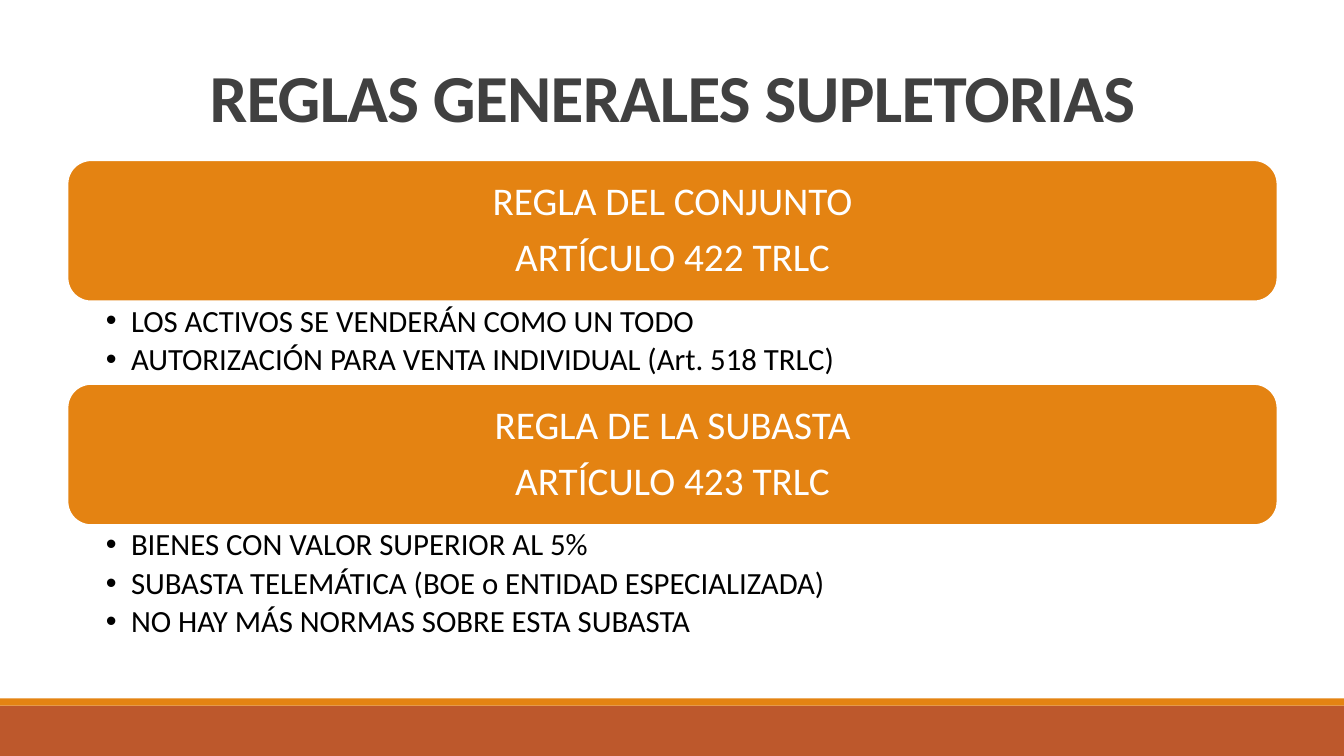
from lxml.etree import SubElement
from pptx import Presentation
from pptx.dml.color import RGBColor
from pptx.enum.shapes import MSO_SHAPE as Shape
from pptx.enum.text import MSO_ANCHOR as Anchor, PP_ALIGN as Align
from pptx.oxml.ns import qn
from pptx.util import Inches, Pt

WHITE = RGBColor(0xFF, 0xFF, 0xFF)
BLACK = RGBColor(0x00, 0x00, 0x00)
GRAY = RGBColor(0x40, 0x40, 0x40)
ORANGE = RGBColor(0xE4, 0x83, 0x12)
RUST = RGBColor(0xBD, 0x58, 0x2C)

WIDTH, HEIGHT = 13.33, 7.5
MARGIN, CONTENT_WIDTH = 0.67, 12
RULES_TOP, HEADER_HEIGHT, BULLET_HEIGHT = 1.59, 1.4, 0.41

TITLE = {"size": Pt(48), "bold": True, "color": GRAY}
HEADER = {"size": Pt(28), "color": WHITE}
BULLET = {"size": Pt(22), "color": BLACK}
CENTERED_TITLE = {"alignment": Align.CENTER, "line_spacing": 0.85}
CENTERED_HEADER = {"alignment": Align.CENTER, "line_spacing": 0.9, "space_after": Pt(9.4)}
LISTED = {"alignment": Align.LEFT, "line_spacing": 0.9, "space_after": Pt(3.7), "level": 1}

RULES = [
    (["REGLA DEL CONJUNTO", "ARTÍCULO 422 TRLC"],
     ["LOS ACTIVOS SE VENDERÁN COMO UN TODO",
      "AUTORIZACIÓN PARA VENTA INDIVIDUAL (Art. 518 TRLC)"]),
    (["REGLA DE LA SUBASTA", "ARTÍCULO 423 TRLC"],
     ["BIENES CON VALOR SUPERIOR AL 5%",
      "SUBASTA TELEMÁTICA (BOE o ENTIDAD ESPECIALIZADA)",
      "NO HAY MÁS NORMAS SOBRE ESTA SUBASTA"]),
]


def add_block(slide, kind, box, fill):
    """Add a filled preset shape without line or shadow."""
    shape = slide.shapes.add_shape(kind, *map(Inches, box))
    shape.shadow.inherit = False
    shape.fill.solid()
    shape.fill.fore_color.rgb = fill
    shape.line.fill.background()
    return shape


def write_lines(shape, lines, font_format, paragraph_format, frame_format):
    """Write one paragraph per line and return the paragraphs."""
    frame = shape.text_frame
    for name, value in {"word_wrap": True, **frame_format}.items():
        setattr(frame, name, value)
    frame.text = "\n".join(lines)
    for paragraph in frame.paragraphs:
        for name, value in paragraph_format.items():
            setattr(paragraph, name, value)
        font = paragraph.runs[0].font
        font.name = "Calibri"
        for name, value in font_format.items():
            if name == "color":
                font.color.rgb = value
            else:
                setattr(font, name, value)
    return frame.paragraphs


def add_bullet(paragraph):
    """Give a paragraph a round bullet with a hanging indent."""
    properties = paragraph._p.get_or_add_pPr()
    properties.set("marL", str(Inches(0.25)))
    properties.set("indent", str(-Inches(0.25)))
    SubElement(properties, qn("a:buFont")).set("typeface", "Arial")
    SubElement(properties, qn("a:buChar")).set("char", "•")


def add_footer(slide, left, top, width, height):
    """Draw the rust band with its thin orange stripe on top."""
    stripe = 0.07
    add_block(slide, Shape.RECTANGLE, (left, top + stripe, width, height - stripe), RUST)
    add_block(slide, Shape.RECTANGLE, (left, top, width, stripe), ORANGE)


def add_title(slide, *box):
    """Write the bold slide title at the bottom of its box."""
    title = slide.shapes.add_textbox(*map(Inches, box))
    paragraphs = write_lines(title, ["REGLAS GENERALES SUPLETORIAS"], TITLE,
                             CENTERED_TITLE, {"vertical_anchor": Anchor.BOTTOM})
    paragraphs[0].runs[0]._r.get_or_add_rPr().set("spc", "-50")


def add_rule(slide, left, top, width, heading, bullets):
    """Stack a rounded heading over its bullets and return the bottom edge."""
    header = add_block(slide, Shape.ROUNDED_RECTANGLE, (left, top, width, HEADER_HEIGHT), ORANGE)
    header.line.color.rgb = WHITE
    header.line.width = Pt(1.25)
    write_lines(header, heading, HEADER, CENTERED_HEADER, {"vertical_anchor": Anchor.MIDDLE})

    list_top = top + HEADER_HEIGHT
    list_height = BULLET_HEIGHT * len(bullets)
    body = slide.shapes.add_textbox(*map(Inches, (left, list_top, width, list_height)))
    insets = {"margin_left": Inches(0.38), "margin_right": Inches(0.22),
              "margin_top": Inches(0.04), "margin_bottom": Inches(0.04)}
    for paragraph in write_lines(body, bullets, BULLET, LISTED, insets):
        add_bullet(paragraph)
    return list_top + list_height


def main():
    """Build the slide and save it."""
    presentation = Presentation()
    presentation.slide_width = Inches(WIDTH)
    presentation.slide_height = Inches(HEIGHT)
    slide = presentation.slides.add_slide(presentation.slide_layouts[6])
    add_footer(slide, 0, 6.93, WIDTH, HEIGHT - 6.93)
    add_title(slide, MARGIN, 0.36, CONTENT_WIDTH, 1.04)
    top = RULES_TOP
    for heading, bullets in RULES:
        top = add_rule(slide, MARGIN, top, CONTENT_WIDTH, heading, bullets)
    presentation.save("out.pptx")


if __name__ == "__main__":
    main()
